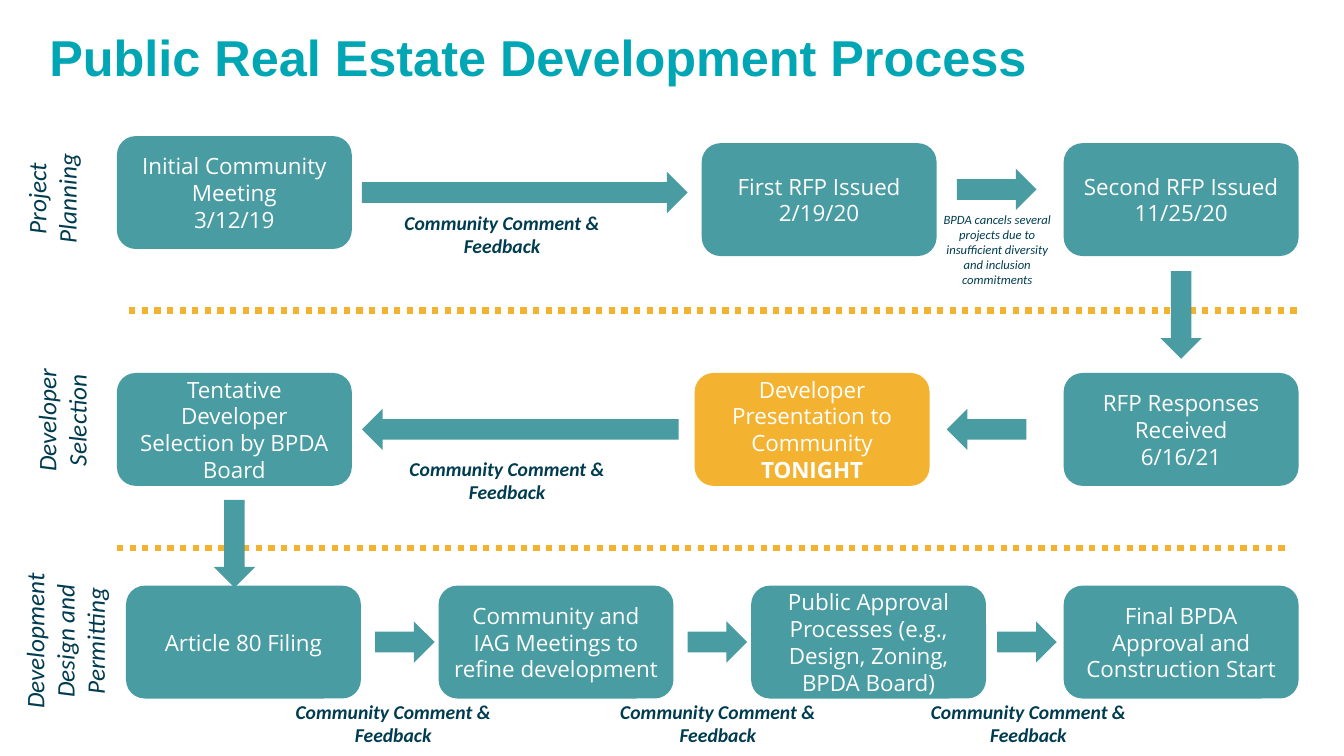
import dataclasses

import lxml.etree
import pptx
import pptx.dml.color
import pptx.enum.dml
import pptx.enum.shapes
import pptx.enum.text
import pptx.oxml.ns
import pptx.util

Inches = pptx.util.Inches
Shapes = pptx.enum.shapes.MSO_SHAPE
Align = pptx.enum.text.PP_ALIGN
Anchor = pptx.enum.text.MSO_ANCHOR


@dataclasses.dataclass(frozen=True)
class Theme:
    title: str = "00A6B4"
    teal: str = "499CA1"
    gold: str = "F3B330"
    navy: str = "003C50"
    white: str = "FFFFFF"
    title_font: str = "Arial"
    step_font: str = "Open Sans"
    label_font: str = "Calibri"
    title_size: int = 36
    phase_size: int = 18
    step_size: int = 16
    feedback_size: int = 14
    remark_size: int = 9


THEME = Theme()
SLIDE_WIDTH, SLIDE_HEIGHT = 13.33, 7.5
STEP_WIDTH, STEP_HEIGHT = 2.33, 1.12
ARROW_THICKNESS = 0.41
LABEL_WIDTH, LABEL_HEIGHT = 2.62, 0.59
FIRST_COLUMN, LAST_COLUMN = 1.16, 10.55
PERMIT_COLUMNS = [1.25 + 3.1 * column for column in range(4)]
FEEDBACK = "Community Comment & Feedback"


def color(value):
    return pptx.dml.color.RGBColor.from_string(value)


def write(shape, lines, font, size, ink, bold=False, italic=False,
          align=Align.CENTER, anchor=Anchor.MIDDLE):
    """Put each line in its own paragraph; bold may name one line."""
    frame = shape.text_frame
    frame.word_wrap = True
    frame.auto_size = pptx.enum.text.MSO_AUTO_SIZE.NONE
    frame.vertical_anchor = anchor
    for index, line in enumerate(lines):
        paragraph = frame.paragraphs[0] if index == 0 else frame.add_paragraph()
        paragraph.alignment = align
        run = paragraph.add_run()
        run.text = line
        run.font.name = font
        run.font.size = pptx.util.Pt(size)
        run.font.bold = bold is True or line == bold
        run.font.italic = italic
        run.font.color.rgb = color(ink)


def add_filled(slide, kind, box, fill):
    shape = slide.shapes.add_shape(kind, *map(Inches, box))
    shape.shadow.inherit = False
    shape.fill.solid()
    shape.fill.fore_color.rgb = color(fill)
    shape.line.fill.background()
    return shape


def add_label(slide, box, lines, size, bold=False, rotation=0):
    label = slide.shapes.add_textbox(*map(Inches, box))
    label.rotation = rotation
    write(label, lines, THEME.label_font, size, THEME.navy, bold, italic=True)


def add_title(slide, box, text):
    title = slide.shapes.title
    title.left, title.top, title.width, title.height = map(Inches, box)
    write(title, [text], THEME.title_font, THEME.title_size, THEME.title,
          bold=True, align=Align.LEFT, anchor=Anchor.TOP)


def add_divider(slide, left, top, width):
    line = slide.shapes.add_connector(
        pptx.enum.shapes.MSO_CONNECTOR.STRAIGHT,
        *map(Inches, (left, top, left + width, top)))
    line.line.color.rgb = color(THEME.gold)
    line.line.width = pptx.util.Pt(4.5)
    line.line.dash_style = pptx.enum.dml.MSO_LINE.ROUND_DOT
    lxml.etree.SubElement(line._element.spPr, pptx.oxml.ns.qn("a:effectLst"))


def add_down_arrow(slide, column, top):
    """Lead from the step in this column to the phase below."""
    left = column + (STEP_WIDTH - ARROW_THICKNESS) / 2
    add_filled(slide, Shapes.DOWN_ARROW, (left, top, ARROW_THICKNESS, 0.87),
               THEME.teal)


def add_phase(slide, box, name, name_box, steps, arrows, arrow_kind, feedback):
    """Draw one phase; vertical offsets count from the top of its box."""
    left, top, width, height = box
    # Phase name: centre x, centre offset, length and depth of the turned box
    center, offset, length, depth = name_box
    add_label(slide, (left + center - length / 2, top + offset - depth / 2,
                      length, depth), name, THEME.phase_size, rotation=270)
    # Steps
    for column, offset, lines, fill in steps:
        step = add_filled(slide, Shapes.ROUNDED_RECTANGLE,
                          (left + column, top + offset, STEP_WIDTH, height), fill)
        write(step, lines, THEME.step_font, THEME.step_size, THEME.white,
              bold="TONIGHT")
    # Arrows between steps
    for column, offset, length in arrows:
        middle = top + offset + (height - ARROW_THICKNESS) / 2
        add_filled(slide, arrow_kind,
                   (left + column, middle, length, ARROW_THICKNESS), THEME.teal)
    # Feedback labels
    for column, offset in feedback:
        add_label(slide, (left + column, top + offset, LABEL_WIDTH, LABEL_HEIGHT),
                  [FEEDBACK], THEME.feedback_size, bold=True)


def add_planning(slide, box):
    add_phase(
        slide, box, ["Project Planning"], (0.51, 0.55, 1.11, 0.59),
        [(FIRST_COLUMN, -0.07, ["Initial Community Meeting", "3/12/19"], THEME.teal),
         (6.96, 0, ["First RFP Issued", "2/19/20"], THEME.teal),
         (LAST_COLUMN, 0, ["Second RFP Issued", "11/25/20"], THEME.teal)],
        [(3.59, -0.07, 3.23), (9.49, -0.1, 0.79)], Shapes.RIGHT_ARROW,
        [(3.67, 0.61)])
    add_label(slide, (box[0] + 9.23, box[1] + 0.76, 1.32, LABEL_HEIGHT),
              ["BPDA cancels several projects due to insufficient diversity "
               "and inclusion commitments"], THEME.remark_size)


def add_selection(slide, box):
    add_phase(
        slide, box, ["Developer", "Selection"], (0.61, 0.47, 1.31, 0.59),
        [(LAST_COLUMN, 0, ["RFP Responses Received", "6/16/21"], THEME.teal),
         (6.89, 0, ["Developer Presentation to Community", "TONIGHT"], THEME.gold),
         (FIRST_COLUMN, 0, ["Tentative Developer Selection by BPDA Board"],
          THEME.teal)],
        [(9.39, 0, 0.79), (3.59, 0, 3.14)], Shapes.LEFT_ARROW, [(3.72, 0.77)])


def add_permitting(slide, box):
    names = ["Article 80 Filing",
             "Community and IAG Meetings to refine development",
             "Public Approval Processes (e.g., Design, Zoning, BPDA Board)",
             "Final BPDA Approval and Construction Start"]
    add_phase(
        slide, box, ["Development Design and Permitting"],
        (0.64, 0.55, 1.85, 0.76),
        [(column, 0, [name], THEME.teal)
         for column, name in zip(PERMIT_COLUMNS, names)],
        [(column, 0, 0.59) for column in (3.72, 6.82, 9.89)], Shapes.RIGHT_ARROW,
        [(column, 1.07) for column in (2.59, 5.81, 8.89)])


def main():
    presentation = pptx.Presentation()
    presentation.slide_width = Inches(SLIDE_WIDTH)
    presentation.slide_height = Inches(SLIDE_HEIGHT)
    slide = presentation.slides.add_slide(presentation.slide_layouts[5])
    add_title(slide, (0.39, 0.21, 12.4, 1.0),
              "Public Real Estate Development Process")

    # Dividers and the arrows that cross them
    for left, top in ((1.28, 3.08), (FIRST_COLUMN, 5.44)):
        add_divider(slide, left, top, 11.63)
    for column, top in ((LAST_COLUMN, 2.69), (FIRST_COLUMN, 4.96)):
        add_down_arrow(slide, column, top)

    # Phases from top to bottom
    phases = ((add_planning, 1.42), (add_selection, 3.7), (add_permitting, 5.81))
    for add_region, top in phases:
        add_region(slide, (0, top, SLIDE_WIDTH, STEP_HEIGHT))
    presentation.save("out.pptx")


if __name__ == "__main__":
    main()
